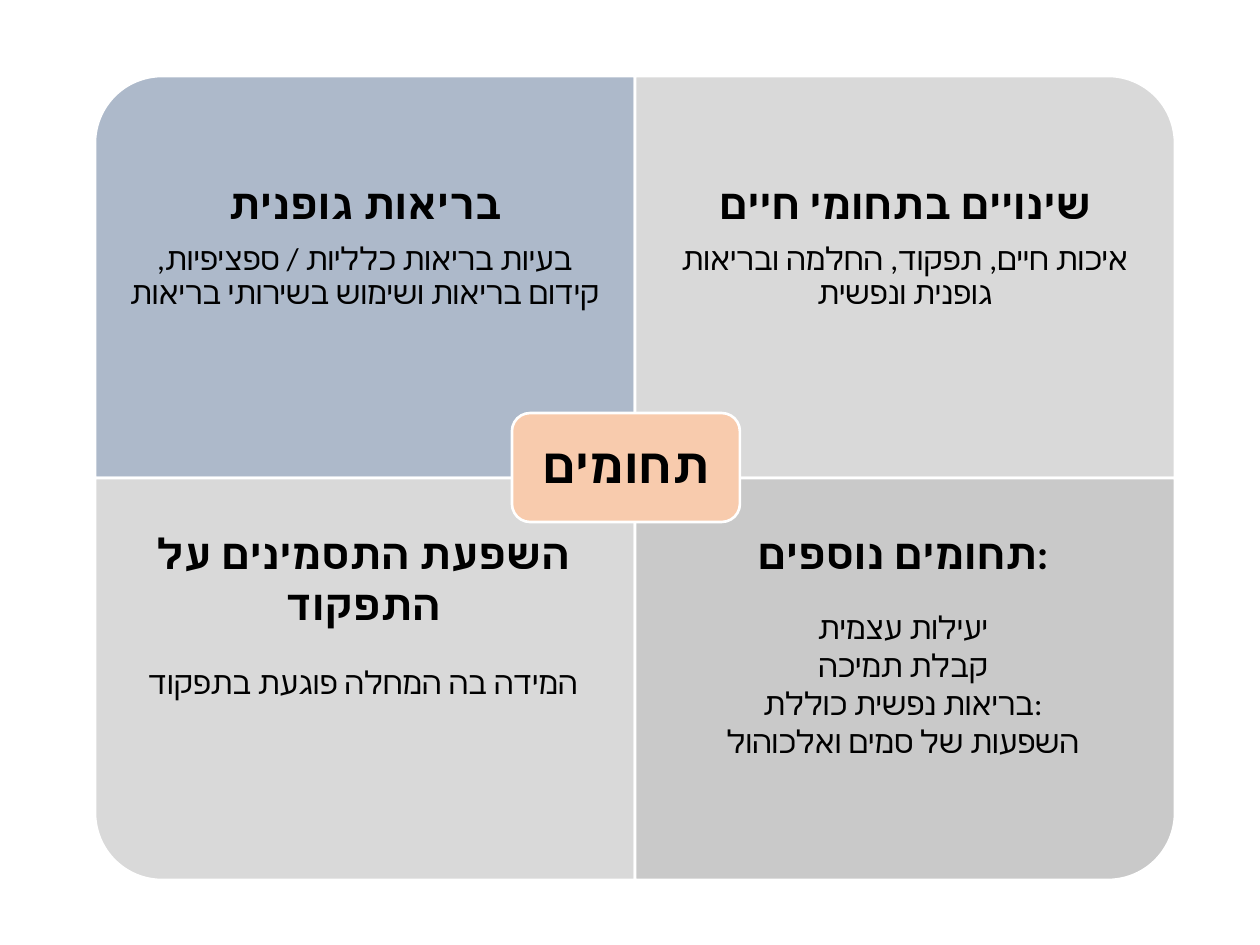
from lxml import etree
from pptx import Presentation
from pptx.dml.color import RGBColor
from pptx.enum.shapes import MSO_SHAPE
from pptx.enum.text import MSO_ANCHOR, PP_ALIGN
from pptx.oxml.ns import qn
from pptx.util import Emu, Pt

FONT = "Calibri"
BLACK = RGBColor(0x00, 0x00, 0x00)
WHITE = RGBColor(0xFF, 0xFF, 0xFF)
BLUE_GRAY = RGBColor(0xAD, 0xB9, 0xCA)
LIGHT_GRAY = RGBColor(0xD9, 0xD9, 0xD9)
MID_GRAY = RGBColor(0xC9, 0xC9, 0xC9)
PEACH = RGBColor(0xF8, 0xCB, 0xAD)

SLIDE_W, SLIDE_H = 1260, 945
GRID_LEFT, GRID_TOP = 95, 76
CELL_W, CELL_H = 540, 402
CENTER_BOX = (512, 413, 228, 109)
CENTER_TITLE = "תחומים"

# Text boxes are (left, top, width, height); gap is the points below the heading.
QUADRANTS = [
    dict(column=0, row=0, rotation=270, fill=BLUE_GRAY,
         box=(119, 183, 492, 150), rtl=True, spacing=0.9, gap=8.4,
         heading=["בריאות גופנית"],
         body=["בעיות בריאות כלליות / ספציפיות, קידום בריאות ושימוש בשירותי בריאות"]),
    dict(column=1, row=0, rotation=0, fill=LIGHT_GRAY,
         box=(659, 183, 492, 150), rtl=True, spacing=0.9, gap=8.4,
         heading=["שינויים בתחומי חיים"],
         body=["איכות חיים, תפקוד, החלמה ובריאות גופנית ונפשית"]),
    dict(column=0, row=1, rotation=180, fill=LIGHT_GRAY,
         box=(107, 528, 512, 190), rtl=False, spacing=1.0, gap=19.5,
         heading=["השפעת התסמינים על", "התפקוד"],
         body=["המידה בה המחלה פוגעת בתפקוד"]),
    dict(column=1, row=1, rotation=90, fill=MID_GRAY,
         box=(653, 528, 500, 240), rtl=False, spacing=1.0, gap=17,
         heading=["תחומים נוספים:"],
         body=["יעילות עצמית", "קבלת תמיכה", "בריאות נפשית כוללת:",
               "השפעות של סמים ואלכוהול"]),
]


def px(length):
    return Emu(round(length * 914400 / 126))


def add_panel(slide, preset, left, top, width, height, fill, rotation=0):
    """Add a white-edged panel; the box is the one seen after rotation."""
    if rotation % 180:
        left, top = left + (width - height) / 2, top + (height - width) / 2
        width, height = height, width
    panel = slide.shapes.add_shape(preset, px(left), px(top), px(width), px(height))
    panel.rotation = rotation
    panel.shadow.inherit = False
    panel.fill.solid()
    panel.fill.fore_color.rgb = fill
    panel.line.color.rgb = WHITE
    panel.line.width = Pt(1.5)
    return panel


def prepare_frame(frame, anchor):
    frame.word_wrap = True
    frame.vertical_anchor = anchor
    frame.margin_left = frame.margin_right = 0
    frame.margin_top = frame.margin_bottom = 0


def write(paragraph, text, size, bold=False, rtl=False, spacing=1.0, after=0):
    paragraph.alignment = PP_ALIGN.CENTER
    paragraph.line_spacing = spacing
    paragraph.space_after = Pt(after)
    if rtl:
        paragraph._p.get_or_add_pPr().set("rtl", "1")
    run = paragraph.add_run()
    run.text = text
    run.font.size = Pt(size)
    run.font.bold = bold
    run.font.name = FONT
    run.font.color.rgb = BLACK
    etree.SubElement(run._r.get_or_add_rPr(), qn("a:cs"), typeface=FONT)


def add_quadrant_text(slide, quadrant):
    box = slide.shapes.add_textbox(*map(px, quadrant["box"]))
    frame = box.text_frame
    prepare_frame(frame, MSO_ANCHOR.TOP)
    heading, body = quadrant["heading"], quadrant["body"]
    for index, text in enumerate(heading + body):
        paragraph = frame.add_paragraph() if index else frame.paragraphs[0]
        is_heading = index < len(heading)
        write(paragraph, text, size=24 if is_heading else 18, bold=is_heading,
              rtl=quadrant["rtl"], spacing=quadrant["spacing"],
              after=quadrant["gap"] if index == len(heading) - 1 else 0)


def main():
    prs = Presentation()
    prs.slide_width, prs.slide_height = px(SLIDE_W), px(SLIDE_H)
    slide = prs.slides.add_slide(prs.slide_layouts[6])

    for quadrant in QUADRANTS:
        add_panel(slide, MSO_SHAPE.ROUND_1_RECTANGLE,
                  GRID_LEFT + quadrant["column"] * CELL_W,
                  GRID_TOP + quadrant["row"] * CELL_H,
                  CELL_W, CELL_H, quadrant["fill"], quadrant["rotation"])
        add_quadrant_text(slide, quadrant)

    center = add_panel(slide, MSO_SHAPE.ROUNDED_RECTANGLE, *CENTER_BOX, PEACH)
    prepare_frame(center.text_frame, MSO_ANCHOR.MIDDLE)
    write(center.text_frame.paragraphs[0], CENTER_TITLE, size=28, bold=True,
          rtl=True, spacing=0.9)

    prs.save("out.pptx")


if __name__ == "__main__":
    main()
